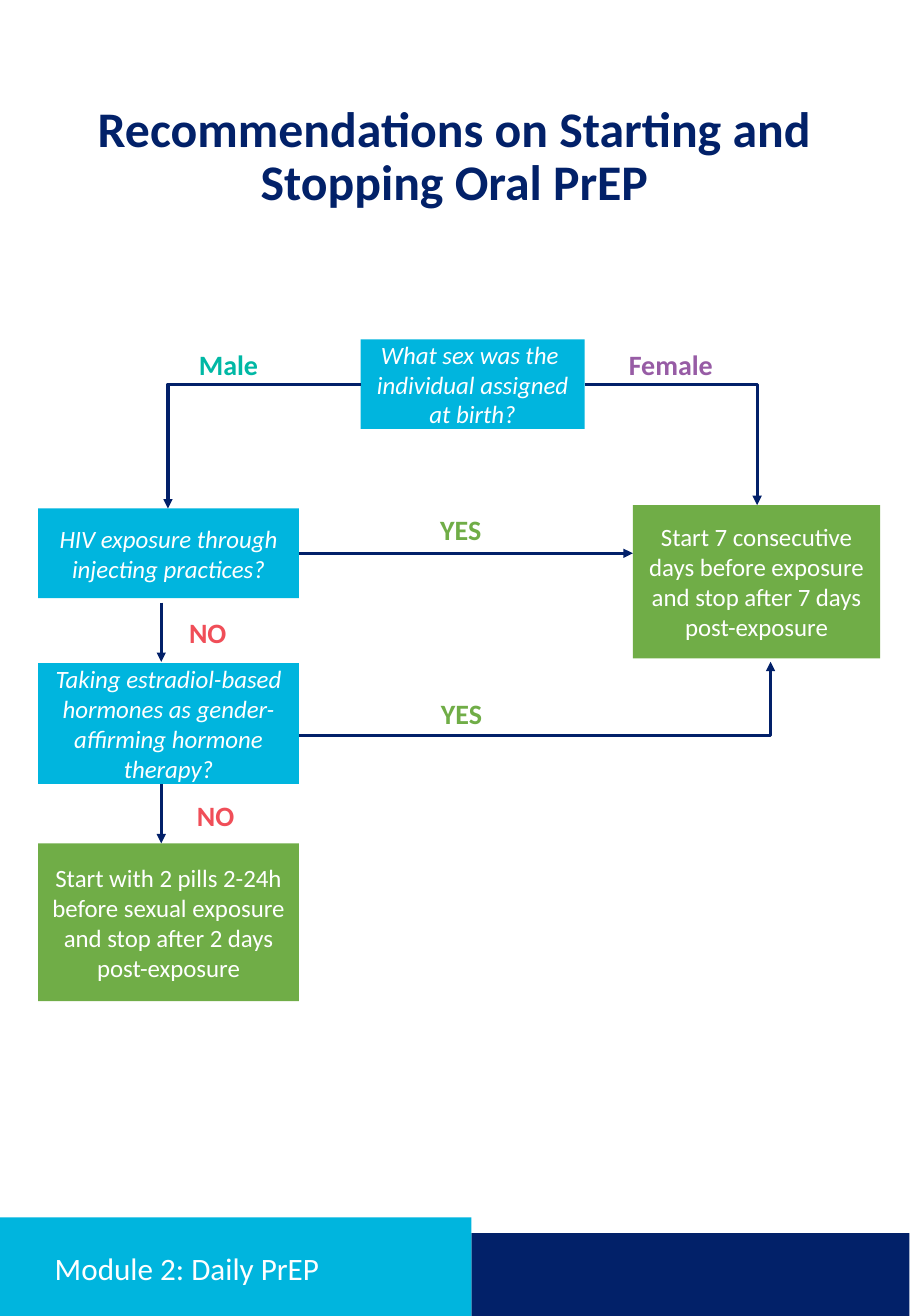
import pptx
import pptx.dml.color
import pptx.enum.shapes
import pptx.enum.text
import pptx.oxml
import pptx.oxml.ns
import pptx.util

Inches = pptx.util.Inches
ALIGN = pptx.enum.text.PP_ALIGN
ANCHOR = pptx.enum.text.MSO_ANCHOR
COLORS = {
    "navy": "022169", "arrow": "022069", "blue": "00B5DE", "green": "70AD47",
    "teal": "00B8A5", "purple": "975CA5", "red": "F04E58", "white": "FFFFFF",
}
FONT = "Calibri"
PAGE_POINTS = (585, 846)
LEFT, COLUMN = 0.34, 2.33
RIGHT = LEFT + COLUMN
BRANCH_Y, DOWN_X = 3.43, 1.44

FOOTER = [(4.21, 11.01, 3.91, 0.75, "navy"), (0, 10.87, 4.21, 0.89, "blue")]
QUESTIONS = [
    ((3.22, 3.03, 2, 0.8), "What sex was the \nindividual assigned at birth?"),
    ((LEFT, 4.54, COLUMN, 0.8), "HIV exposure through injecting practices?"),
    ((LEFT, 5.92, COLUMN, 1.08),
     "Taking estradiol-based hormones as gender-affirming hormone therapy?"),
]
ANSWERS = [
    ((5.65, 4.51, 2.21, 1.37),
     "Start 7 consecutive days before exposure and stop after 7 days post-exposure"),
    ((LEFT, 7.53, COLUMN, 1.41),
     "Start with 2 pills 2-24h before sexual exposure and stop after 2 days post-exposure"),
]
LABELS = [
    ((1.63, 3.05, 0.82, 0.4), "Male", "teal", ALIGN.CENTER),
    ((5.28, 3.05, 1.42, 0.4), "Female", "purple", ALIGN.CENTER),
    ((3.8, 4.53, 0.63, 0.4), "YES", "green", ALIGN.CENTER),
    ((3.71, 6.17, 0.82, 0.4), "YES", "green", ALIGN.CENTER),
    ((1.59, 5.45, 0.57, 0.4), "NO", "red", ALIGN.LEFT),
    ((1.66, 7.08, 0.57, 0.4), "NO", "red", ALIGN.LEFT),
]
STRAIGHT_ARROWS = [
    (RIGHT, 4.94, 5.65, 4.94),
    (DOWN_X, 5.38, DOWN_X, 5.91),
    (DOWN_X, 7, DOWN_X, 7.53),
]
BENT_ARROWS = [
    (5.22, BRANCH_Y, 6.76, 4.51),
    (3.22, BRANCH_Y, 1.5, 4.54),
    (RIGHT, 6.57, 6.88, 5.91),
]


def rgb(name):
    return pptx.dml.color.RGBColor.from_string(COLORS[name])


def write(box, text, size, color, align=ALIGN.CENTER, anchor=ANCHOR.TOP,
          bold=False, italic=False, spacing=None):
    frame = box.text_frame
    frame.word_wrap = True
    frame.vertical_anchor = anchor
    para = frame.paragraphs[0]
    para.alignment = align
    para.line_spacing = spacing
    for index, line in enumerate(text.split("\n")):
        if index:
            para.add_line_break()
        span = para.add_run()
        span.text = line
        span.font.name = FONT
        span.font.size = pptx.util.Pt(size)
        span.font.bold = bold
        span.font.italic = italic
        span.font.color.rgb = rgb(color)


def add_text(page, area, text, size, color, **style):
    box = page.shapes.add_textbox(*map(Inches, area))
    write(box, text, size, color, **style)


def add_block(page, area, color):
    block = page.shapes.add_shape(
        pptx.enum.shapes.MSO_SHAPE.RECTANGLE, *map(Inches, area))
    block.shadow.inherit = False
    block.fill.solid()
    block.fill.fore_color.rgb = rgb(color)
    block.line.fill.background()
    return block


def add_arrow(page, ends, bent):
    kinds = pptx.enum.shapes.MSO_CONNECTOR
    arrow = page.shapes.add_connector(
        kinds.ELBOW if bent else kinds.STRAIGHT, *map(Inches, ends))
    arrow.line.color.rgb = rgb("arrow")
    arrow.line.width = pptx.util.Pt(2)
    qn = pptx.oxml.ns.qn
    properties = arrow._element.spPr
    if bent:
        properties.find(qn("a:prstGeom")).set("prst", "bentConnector2")
    head = pptx.oxml.parse_xml(
        f'<a:tailEnd {pptx.oxml.ns.nsdecls("a")} type="triangle"/>')
    properties.find(qn("a:ln")).append(head)
    properties.append(pptx.oxml.parse_xml(
        f'<a:effectLst {pptx.oxml.ns.nsdecls("a")}/>'))


def main():
    """Build the flowchart on starting and stopping oral PrEP."""
    deck = pptx.Presentation()
    deck.slide_width, deck.slide_height = map(pptx.util.Pt, PAGE_POINTS)
    page = deck.slides.add_slide(deck.slide_layouts[6])

    for *area, color in FOOTER:
        add_block(page, area, color)
    add_text(page, (0.61, 0.88, 6.9, 1.03),
             "Recommendations on Starting and Stopping Oral PrEP",
             32, "navy", bold=True, spacing=0.9)
    add_text(page, (0.39, 11.12, 3.52, 0.45), "Module 2: Daily PrEP",
             20, "white", align=ALIGN.LEFT, anchor=ANCHOR.MIDDLE, spacing=0.9)

    for blocks, color, italic in ((QUESTIONS, "blue", True), (ANSWERS, "green", False)):
        for area, text in blocks:
            write(add_block(page, area, color), text, 16, "white",
                  anchor=ANCHOR.MIDDLE, italic=italic)
    for arrows, bent in ((STRAIGHT_ARROWS, False), (BENT_ARROWS, True)):
        for ends in arrows:
            add_arrow(page, ends, bent)
    for area, text, color, align in LABELS:
        add_text(page, area, text, 18, color, align=align, bold=True)

    deck.save("out.pptx")


if __name__ == "__main__":
    main()
